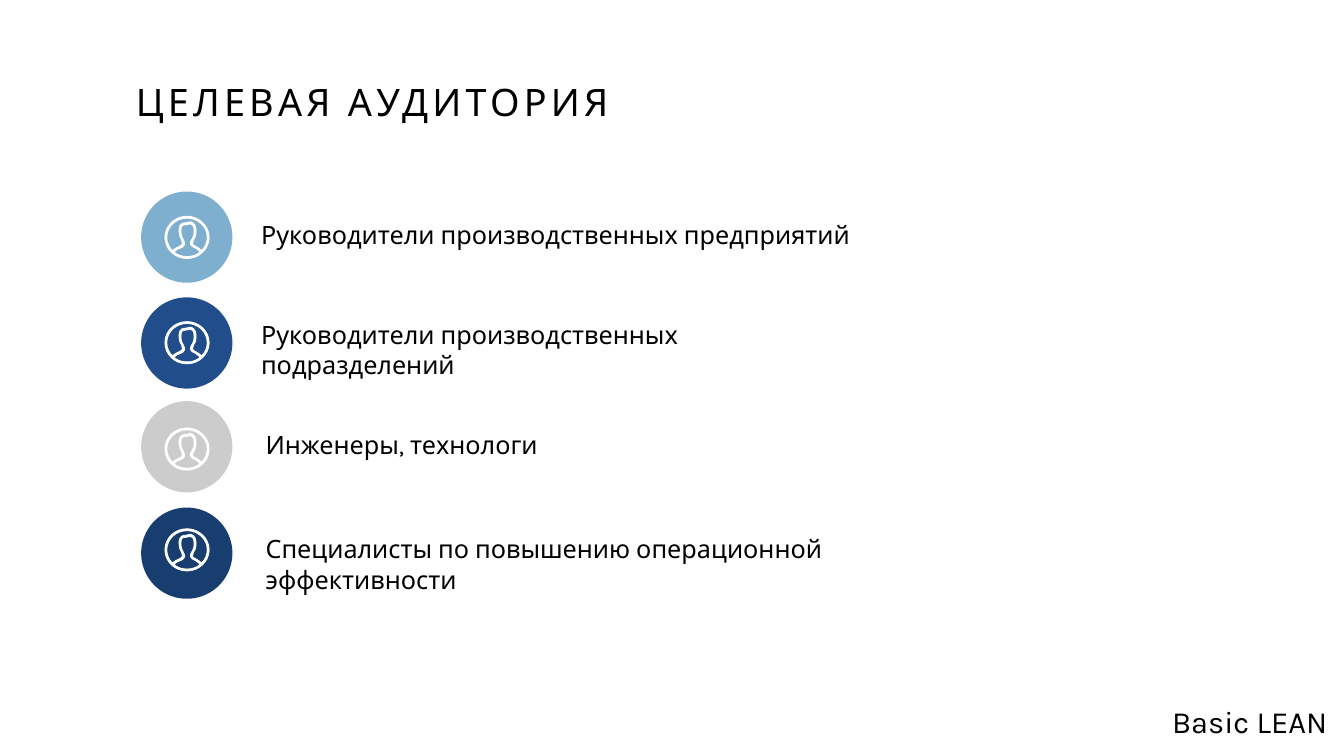
from dataclasses import dataclass

from lxml.etree import SubElement
from pptx import Presentation
from pptx.dml.color import RGBColor
from pptx.enum.shapes import MSO_SHAPE
from pptx.enum.text import MSO_ANCHOR, MSO_AUTO_SIZE, PP_ALIGN
from pptx.oxml.ns import qn
from pptx.util import Inches, Pt

OVAL = MSO_SHAPE.OVAL
TOP = MSO_ANCHOR.TOP
GROW = MSO_AUTO_SIZE.SHAPE_TO_FIT_TEXT
LEFT, CENTER = PP_ALIGN.LEFT, PP_ALIGN.CENTER

SLIDE_WIDTH, SLIDE_HEIGHT = 26.66, 15
FONT = "Karla"
BLACK, WHITE = "000000", "FFFFFF"
CIRCLE_LEFT, CIRCLE_SIZE = 2.8, 1.81
ICON_LEFT, ICON_UNIT = 3.27, 0.01
ICON_CORNER = (88, 84)
TEXT_HEIGHT = 0.71

PERSON_CONTOURS = (
    "73,68 71,66 66,62 62,60 58,58 56,57 55,55 54,53 55,52 56,50 56,49 57,48 57,47 "
    "60,43 62,39 62,29 62,12 52,11 50,11 48,11 47,12 46,12 45,12 44,13 42,13 "
    "37,13 28,13 28,28 28,39 31,43 33,47 33,48 34,49 34,50 36,54 35,57 30,59 "
    "24,62 21,63 15,68 8,61 4,52 4,42 4,21 22,4 44,4 66,4 84,21 84,42 84,52 80,61 73,68",
    "44,80 34,80 25,77 18,71 23,66 26,65 32,63 39,60 41,55 38,49 38,47 37,46 36,45 "
    "34,42 32,38 32,28 32,17 37,17 42,17 45,17 47,16 48,16 49,15 49,15 50,15 "
    "54,15 58,19 58,29 58,38 56,41 54,45 53,46 53,47 52,48 51,51 50,54 51,56 "
    "52,59 55,61 60,63 64,65 68,69 70,71 63,77 54,80 44,80",
    "44,0 19,0 0,19 0,42 0,65 19,84 44,84 68,84 88,65 88,42 88,19 68,0 44,0",
)


@dataclass(frozen=True)
class Box:
    """A rectangle in inches."""

    left: float
    top: float
    width: float
    height: float

    def lengths(self) -> tuple:
        """Return the four lengths for python-pptx."""
        return tuple(map(Inches, (self.left, self.top, self.width, self.height)))


@dataclass(frozen=True)
class Audience:
    """One audience group with the tops of its circle, icon and label."""

    label: str
    color: str
    circle_top: float
    icon_top: float
    text_left: float
    text_top: float
    text_width: float


AUDIENCES = (
    Audience("Руководители производственных предприятий", "7FAFCF", 3.8, 4.29, 5.08, 4.3, 14.92),
    Audience("Руководители производственных подразделений", "214E8B", 5.9, 6.38, 5.08, 6.29, 11.8),
    Audience("Инженеры, технологи", "CCCCCC", 7.96, 8.49, 5.17, 8.46, 13.33),
    Audience("Специалисты по повышению операционной эффективности", "183D6F",
             10.07, 10.49, 5.17, 10.54, 14.21),
)


def rgb(value: str) -> RGBColor:
    """Turn a hex string into a colour."""
    return RGBColor.from_string(value)


def apply_format(target, values: dict) -> None:
    """Set every attribute in a dict of format values."""
    for name, value in values.items():
        setattr(target, name, value)


def write_text(shape, text: str, size: float, alignment=LEFT, spacing: float = 0) -> None:
    """Write one formatted paragraph into a shape."""
    frame = shape.text_frame
    apply_format(frame, {"word_wrap": True, "auto_size": GROW, "vertical_anchor": TOP})
    paragraph = frame.paragraphs[0]
    paragraph.alignment = alignment
    run = paragraph.add_run()
    run.text = text
    apply_format(run.font, {"name": FONT, "size": Pt(size)})
    run.font.color.rgb = rgb(BLACK)
    if spacing:
        run.font._element.set("spc", str(round(spacing * 100)))


def add_text(slide, box: Box, text: str, size: float) -> None:
    """Add a text box."""
    write_text(slide.shapes.add_textbox(*box.lengths()), text, size)


def fill_shape(shape, color: str) -> None:
    """Give a shape a plain fill and no shadow."""
    shape.shadow.inherit = False
    shape.fill.solid()
    shape.fill.fore_color.rgb = rgb(color)


def add_command(outline, tag: str, nodes: list[str]) -> None:
    """Append one drawing command with its points to an outline."""
    command = SubElement(outline, qn(tag))
    for node in nodes:
        x, y = node.split(",")
        SubElement(command, qn("a:pt"), x=x, y=y)


def add_person_icon(slide, top: float) -> None:
    """Draw the person inside a ring from cubic curves."""
    builder = slide.shapes.build_freeform(0, 0, scale=Inches(ICON_UNIT))
    builder.add_line_segments([ICON_CORNER], close=False)
    icon = builder.convert_to_shape(Inches(ICON_LEFT), Inches(top))
    outline = icon._element.xpath(".//a:path")[0]
    for command in list(outline):
        outline.remove(command)
    for contour in PERSON_CONTOURS:
        nodes = contour.split()
        add_command(outline, "a:moveTo", nodes[:1])
        for start in range(1, len(nodes), 3):
            add_command(outline, "a:cubicBezTo", nodes[start:start + 3])
        add_command(outline, "a:close", [])
    fill_shape(icon, WHITE)
    icon.line.color.rgb = rgb(WHITE)
    icon.line.width = Pt(1)


def add_audience(slide, audience: Audience) -> None:
    """Draw one row with its circle, icon and label."""
    circle_box = Box(CIRCLE_LEFT, audience.circle_top, CIRCLE_SIZE, CIRCLE_SIZE)
    circle = slide.shapes.add_shape(OVAL, *circle_box.lengths())
    fill_shape(circle, audience.color)
    circle.line.fill.background()
    add_person_icon(slide, audience.icon_top)
    label_box = Box(audience.text_left, audience.text_top, audience.text_width, TEXT_HEIGHT)
    add_text(slide, label_box, audience.label, 36)


def main() -> None:
    """Build and save the target audience slide."""
    presentation = Presentation()
    apply_format(presentation, {
        "slide_width": Inches(SLIDE_WIDTH), "slide_height": Inches(SLIDE_HEIGHT),
    })
    slide = presentation.slides.add_slide(presentation.slide_layouts[5])
    title = slide.shapes.title
    title_box = Box(2.58, 1.52, 9.61, 1.01)
    apply_format(title, dict(zip(("left", "top", "width", "height"), title_box.lengths())))
    write_text(title, "ЦЕЛЕВАЯ АУДИТОРИЯ", 54, CENTER, 6)
    for audience in AUDIENCES:
        add_audience(slide, audience)
    add_text(slide, Box(SLIDE_WIDTH - 3.51, 13.9, 3.51, 0.84), "Basic LEAN", 44)
    presentation.save("out.pptx")


if __name__ == "__main__":
    main()
